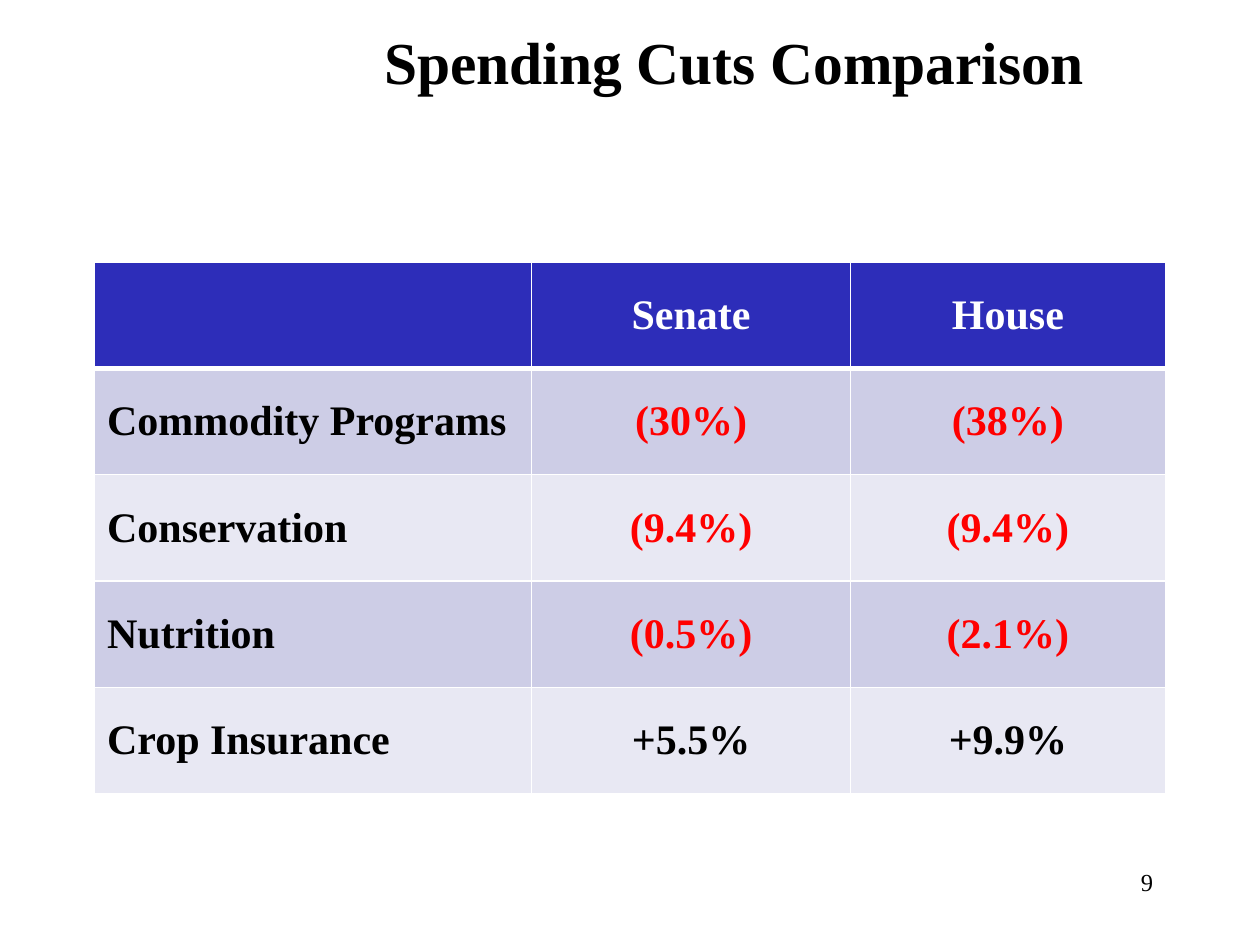
import pptx
import pptx.dml.color
import pptx.enum.text
import pptx.oxml
import pptx.oxml.ns
import pptx.util
from pptx.util import Inches

COLORS = {
    "black": "000000",
    "white": "FFFFFF",
    "cut": "FF0000",
    "header": "2D2DB9",
    "odd_row": "CDCDE6",
    "even_row": "E8E8F3",
}
FONT = "Times New Roman"
ALIGN = pptx.enum.text.PP_ALIGN
ANCHOR = pptx.enum.text.MSO_ANCHOR

SPENDING = [
    ["", "Senate", "House"],
    ["Commodity Programs", "(30%)", "(38%)"],
    ["Conservation", "(9.4%)", "(9.4%)"],
    ["Nutrition", "(0.5%)", "(2.1%)"],
    ["Crop Insurance", "+5.5%", "+9.9%"],
]
COLUMN_WIDTHS = [3.47, 2.53, 2.5]
TABLE_HEIGHT = 4.22


def rgb(name):
    return pptx.dml.color.RGBColor.from_string(COLORS[name])


def write(frame, text, size, color="black", bold=False, align=ALIGN.LEFT):
    """Put one formatted line into a text frame."""
    paragraph = frame.paragraphs[0]
    paragraph.alignment = align
    run = paragraph.add_run()
    run.text = text
    font_format = {"name": FONT, "size": pptx.util.Pt(size), "bold": bold}
    for attribute, value in font_format.items():
        setattr(run.font, attribute, value)
    run.font.color.rgb = rgb(color)


def add_text(slide, box, text, anchor=ANCHOR.TOP, **text_format):
    frame = slide.shapes.add_textbox(*map(Inches, box)).text_frame
    frame.word_wrap = True
    frame.vertical_anchor = anchor
    write(frame, text, **text_format)


def set_borders(cell, widths):
    """Draw white cell borders; widths maps L, R, T, B to points."""
    properties = cell._tc.get_or_add_tcPr()
    for side, width in widths.items():
        properties.append(pptx.oxml.parse_xml(
            f'<a:ln{side} {pptx.oxml.ns.nsdecls("a")} w="{pptx.util.Pt(width)}">'
            f'<a:solidFill><a:srgbClr val="{COLORS["white"]}"/></a:solidFill>'
            f'</a:ln{side}>'))


def text_color(row, text):
    if row == 0:
        return "white"
    return "cut" if text.startswith("(") else "black"


def row_fill(row):
    if row == 0:
        return "header"
    return "odd_row" if row % 2 else "even_row"


def add_spending_table(slide):
    table = slide.shapes.add_table(
        len(SPENDING), len(COLUMN_WIDTHS), Inches(0.75), Inches(2.08),
        Inches(sum(COLUMN_WIDTHS)), Inches(TABLE_HEIGHT)).table
    for column, width in zip(table.columns, COLUMN_WIDTHS):
        column.width = Inches(width)

    for r, values in enumerate(SPENDING):
        for c, text in enumerate(values):
            cell = table.cell(r, c)
            # A thicker rule separates the header from the body
            set_borders(cell, {"L": 1, "R": 1, "T": 3 if r == 1 else 1,
                               "B": 3 if r == 0 else 1})
            cell.fill.solid()
            cell.fill.fore_color.rgb = rgb(row_fill(r))
            cell.vertical_anchor = ANCHOR.MIDDLE
            if text:
                write(cell.text_frame, text, 24, text_color(r, text), True,
                      ALIGN.CENTER if c else ALIGN.LEFT)


def main():
    presentation = pptx.Presentation()
    presentation.slide_width = Inches(10)
    presentation.slide_height = Inches(7.5)
    slide = presentation.slides.add_slide(presentation.slide_layouts[6])

    # Title
    add_text(slide, (2.33, 0.02, 7, 0.92), "Spending Cuts Comparison",
             ANCHOR.MIDDLE, size=34, bold=True, align=ALIGN.CENTER)
    # Page number
    add_text(slide, (7.17, 6.83, 2.08, 0.5), "9", size=14, align=ALIGN.RIGHT)
    # Senate and House changes by program
    add_spending_table(slide)

    presentation.save("out.pptx")


if __name__ == "__main__":
    main()
